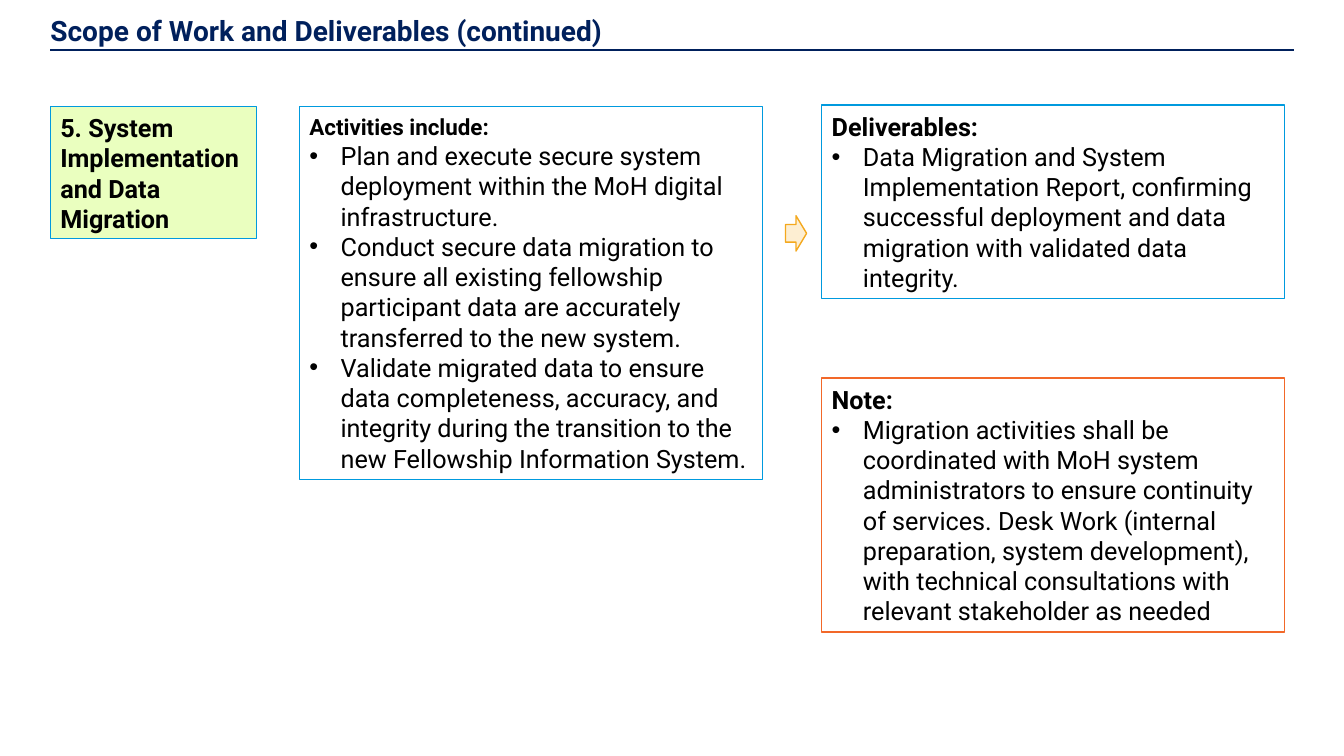
import pptx
import pptx.util
import pptx.dml.color
import pptx.enum.shapes
import pptx.enum.text
import pptx.oxml.ns
from lxml import etree

Inches = pptx.util.Inches
Pt = pptx.util.Pt
SHAPES = pptx.enum.shapes.MSO_SHAPE
ALIGN = pptx.enum.text.PP_ALIGN
ANCHOR = pptx.enum.text.MSO_ANCHOR
qn = pptx.oxml.ns.qn

COLORS = {"navy": "00205C", "blue": "009ADE", "orange": "F26829", "amber": "F4A81D",
          "cream": "FDEED2", "lime": "EAFFBF", "white": "FFFFFF", "black": "000000"}


def add_filled_shape(kind, left, top, width, height, fill, line, line_width):
    shape = slide.shapes.add_shape(kind, Inches(left), Inches(top), Inches(width), Inches(height))
    shape.shadow.inherit = False
    shape.fill.solid()
    shape.fill.fore_color.rgb = pptx.dml.color.RGBColor.from_string(COLORS[fill])
    shape.line.color.rgb = pptx.dml.color.RGBColor.from_string(COLORS[line])
    shape.line.width = Pt(line_width)
    return shape


def format_text(paragraph, size, bold, color="black"):
    paragraph.alignment = ALIGN.LEFT
    paragraph.font.name = "Roboto"
    paragraph.font.size = Pt(size)
    paragraph.font.bold = bold
    paragraph.font.color.rgb = pptx.dml.color.RGBColor.from_string(COLORS[color])


presentation = pptx.Presentation()
presentation.slide_width = Inches(13.33)
presentation.slide_height = Inches(7.5)
slide = presentation.slides.add_slide(presentation.slide_layouts[5])

# Title and the rule below it
title = slide.shapes.title
title.left, title.top, title.width, title.height = Inches(0.5), Inches(0.17), Inches(12.33), Inches(0.47)
frame = title.text_frame
frame.margin_left = frame.margin_top = frame.margin_right = frame.margin_bottom = 0
frame.vertical_anchor = ANCHOR.TOP
frame.text = "Scope of Work and Deliverables (continued)"
frame.paragraphs[0].line_spacing = 0.9
format_text(frame.paragraphs[0], 20, True, "navy")

rule = slide.shapes.add_connector(pptx.enum.shapes.MSO_CONNECTOR.STRAIGHT,
                                  Inches(0.5), Inches(0.5), Inches(12.83), Inches(0.5))
rule.line.color.rgb = pptx.dml.color.RGBColor.from_string(COLORS["navy"])
rule.line.width = Pt(1.5)
etree.SubElement(rule._element.spPr, qn("a:effectLst"))

# Boxes: left, top, width, height, fill, line, line width, heading, heading size, bullets
boxes = [
    (0.5, 1.06, 2.04, 1.31, "lime", "blue", 0.75, "5. System Implementation and Data Migration", 18, []),
    (2.97, 1.06, 4.59, 3.7, "white", "blue", 1, "Activities include:", 16, [
        "Plan and execute secure system deployment within the MoH digital infrastructure.",
        "Conduct secure data migration to ensure all existing fellowship participant data are "
        "accurately transferred to the new system.",
        "Validate migrated data to ensure data completeness, accuracy, and integrity during the "
        "transition to the new Fellowship Information System."]),
    (8.15, 1.04, 4.59, 1.92, "white", "blue", 1, "Deliverables:", 18, [
        "Data Migration and System Implementation Report, confirming successful deployment and "
        "data migration with validated data integrity."]),
    (8.15, 3.75, 4.59, 2.52, "white", "orange", 1, "Note:", 18, [
        "Migration activities shall be coordinated with MoH system administrators to ensure "
        "continuity of services. Desk Work (internal preparation, system development), with "
        "technical consultations with relevant stakeholder as needed"]),
]
for left, top, width, height, fill, line, line_width, heading, heading_size, bullets in boxes:
    box = add_filled_shape(SHAPES.RECTANGLE, left, top, width, height, fill, line, line_width)
    frame = box.text_frame
    frame.word_wrap = True
    frame.auto_size = pptx.enum.text.MSO_AUTO_SIZE.SHAPE_TO_FIT_TEXT
    frame.vertical_anchor = ANCHOR.MIDDLE
    frame.text = heading
    format_text(frame.paragraphs[0], heading_size, True)
    for bullet in bullets:
        paragraph = frame.add_paragraph()
        paragraph.text = bullet
        properties = paragraph._p.get_or_add_pPr()
        properties.set("marL", str(Inches(0.31)))
        properties.set("indent", str(-Inches(0.31)))
        etree.SubElement(properties, qn("a:buFont"), typeface="Arial")
        etree.SubElement(properties, qn("a:buChar"), char="•")
        format_text(paragraph, 18, False)

# Arrow from activities to deliverables
add_filled_shape(SHAPES.RIGHT_ARROW, 7.79, 2.14, 0.21, 0.35, "cream", "amber", 1)

presentation.save("out.pptx")
